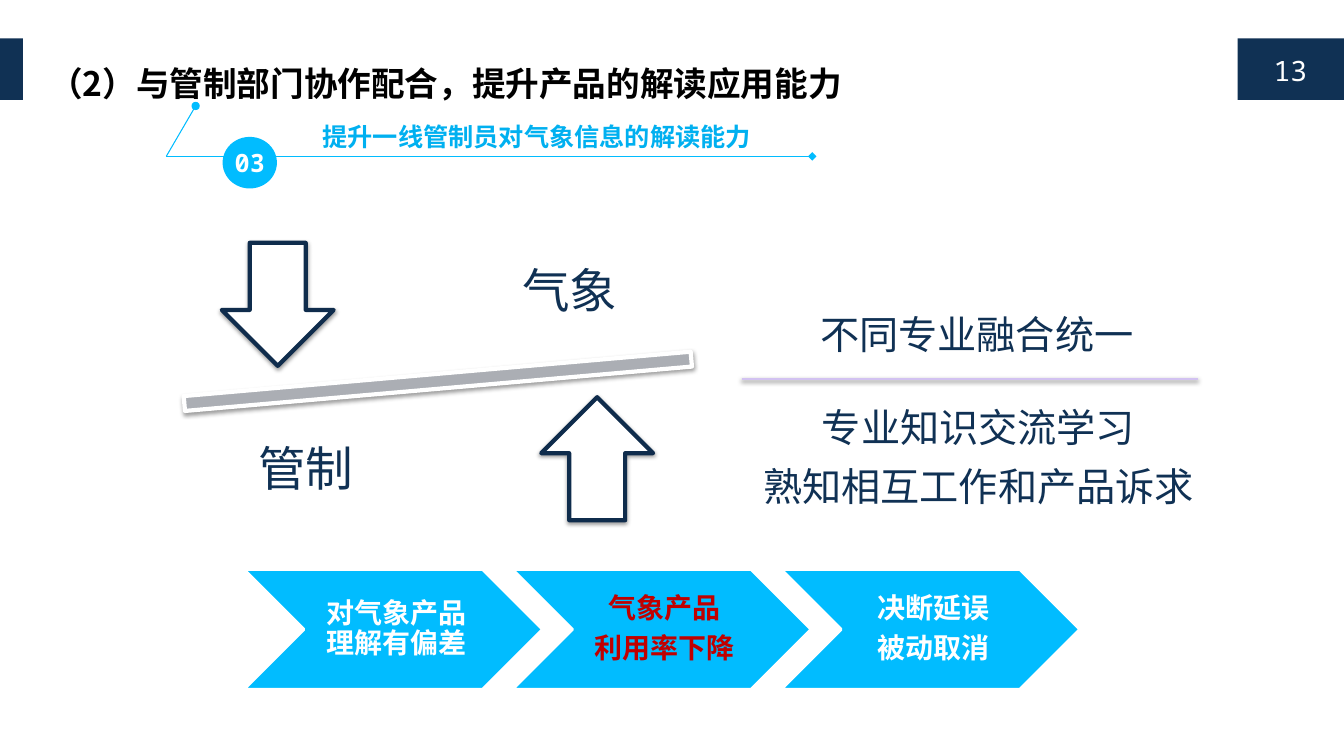
import pptx
import pptx.dml.color
import pptx.enum.shapes
import pptx.enum.text
import pptx.oxml
import pptx.oxml.ns
import pptx.util
from lxml import etree

Cm = pptx.util.Cm
Pt = pptx.util.Pt
SHAPE = pptx.enum.shapes.MSO_SHAPE
ALIGN = pptx.enum.text.PP_ALIGN
ANCHOR = pptx.enum.text.MSO_ANCHOR
qn = pptx.oxml.ns.qn

COLORS = {
    "navy": "103154", "outline": "0F2C4C", "cyan": "01BCFF", "sky": "00B0F0",
    "red": "C00000", "white": "FFFFFF", "black": "000000", "gray": "ABAEB4",
    "lilac": "D2C2F1",
}
SANS = "Noto Sans CJK SC"
MONO = "Noto Sans Mono"


def color(name):
    return pptx.dml.color.RGBColor.from_string(COLORS[name])


def add_shadow(effects):
    """Soft shadow straight below the element."""
    outer = etree.SubElement(effects, qn("a:outerShdw"), blurRad=str(Pt(3.1)),
                             dist=str(Pt(1.6)), dir="5400000", rotWithShape="0")
    tint = etree.SubElement(outer, qn("a:srgbClr"), val=COLORS["black"])
    etree.SubElement(tint, qn("a:alpha"), val="38000")


def add_shape(page, kind, left, top, width, height, fill,
              line=None, weight=3, shadow=False, rotation=0):
    shape = page.shapes.add_shape(kind, Cm(left), Cm(top), Cm(width), Cm(height))
    shape.rotation = rotation
    shape.fill.solid()
    shape.fill.fore_color.rgb = color(fill)
    if line:
        shape.line.color.rgb = color(line)
        shape.line.width = Pt(weight)
    else:
        shape.line.fill.background()
    shape.shadow.inherit = False
    if shadow:
        add_shadow(shape._element.spPr.find(qn("a:effectLst")))
    return shape


def add_line(page, start, end, stroke, weight, head=None, tail=None, shadow=False):
    line = page.shapes.add_connector(pptx.enum.shapes.MSO_CONNECTOR.STRAIGHT,
                                     *(Cm(value) for value in start + end))
    line.line.color.rgb = color(stroke)
    line.line.width = Pt(weight)
    for tag, kind in (("a:headEnd", head), ("a:tailEnd", tail)):
        if kind:
            etree.SubElement(line.line._get_or_add_ln(), qn(tag), type=kind)
    effects = etree.SubElement(line._element.spPr, qn("a:effectLst"))
    if shadow:
        add_shadow(effects)


def write(shape, text, size, fill, font=SANS, bold=False, align=ALIGN.LEFT,
          anchor=ANCHOR.TOP, insets=(0.25, 0.13, 0.25, 0.13), wrap=True,
          spacing=None, after=0):
    """Put text into a shape, one paragraph per line of text."""
    frame = shape.text_frame
    frame.word_wrap = wrap
    frame.vertical_anchor = anchor
    (frame.margin_left, frame.margin_top,
     frame.margin_right, frame.margin_bottom) = map(Cm, insets)
    for index, words in enumerate(text.split("\n")):
        para = frame.add_paragraph() if index else frame.paragraphs[0]
        para.alignment = align
        para.space_after = Pt(after)
        if spacing:
            para.line_spacing = spacing
        span = para.add_run()
        span.text = words
        span.font.size = Pt(size)
        span.font.bold = bold
        span.font.name = font
        span.font.color.rgb = color(fill)
        etree.SubElement(span._r.rPr, qn("a:ea"), typeface=font)


def add_text(page, left, top, width, height, text, size, fill, **layout):
    box = page.shapes.add_textbox(Cm(left), Cm(top), Cm(width), Cm(height))
    write(box, text, size, fill, **layout)


def add_header(page):
    for left, width in ((0, 0.58), (31.19, 2.69)):
        add_shape(page, SHAPE.RECTANGLE, left, 0.97, width, 1.55, "navy")
    add_text(page, 31.62, 1.22, 1.8, 1.12, "13", 20, "white",
             font=MONO, align=ALIGN.CENTER)
    add_text(page, 0.99, 1.45, 24.26, 1.4,
             "（2）与管制部门协作配合，提升产品的解读应用能力", 24, "black", bold=True)


def add_subtitle(page):
    corner = (4.19, 3.94)
    add_line(page, (20.47, 3.94), corner, "cyan", 0.75, head="diamond")
    add_line(page, corner, (4.93, 2.67), "cyan", 0.75, tail="oval")
    badge = add_shape(page, SHAPE.OVAL, 5.61, 3.45, 1.37, 1.3, "cyan")
    write(badge, "03", 18, "white", font=MONO, bold=True, align=ALIGN.CENTER,
          anchor=ANCHOR.MIDDLE, insets=(0.05, 0.03, 0.05, 0.03))
    add_text(page, 8.13, 2.92, 15.24, 1.02, "提升一线管制员对气象信息的解读能力",
             18, "sky", bold=True, insets=(0, 0.13, 0.25, 0.13))


def add_balance(page):
    add_shape(page, SHAPE.MATH_MINUS, 2.31, 8.81, 17.45, 1.6, "gray",
              line="white", shadow=True, rotation=355)
    for kind, left, top in ((SHAPE.DOWN_ARROW, 5.59, 6.12),
                            (SHAPE.UP_ARROW, 13.64, 10.01)):
        add_shape(page, kind, left, top, 2.82, 3.1, "white",
                  line="outline", shadow=True)
    for label, left, top in (("气象", 11.56, 5.74), ("管制", 4.9, 10.24)):
        add_text(page, left, top, 5.61, 3.28, label, 34, "navy", font="Arial",
                 align=ALIGN.CENTER, anchor=ANCHOR.MIDDLE, insets=(0.66,) * 4,
                 spacing=0.9)


def add_goals(page):
    add_text(page, 20.42, 7.7, 8.48, 1.45, "不同专业融合统一", 28, "navy", wrap=False)
    add_text(page, 18.92, 9.73, 11.48, 3.25,
             "专业知识交流学习\n熟知相互工作和产品诉求", 28, "navy",
             wrap=False, align=ALIGN.CENTER, spacing=1.25)
    add_line(page, (18.69, 9.55), (30.18, 9.55), "lilac", 2, shadow=True)


def add_chain(page):
    steps = (("对气象产品理解有偏差", "white"),
             ("气象产品\n利用率下降", "red"),
             ("决断延误\n被动取消", "white"))
    for index, (text, fill) in enumerate(steps):
        left = 6.15 + index * 6.77
        add_shape(page, SHAPE.CHEVRON, left, 14.35, 7.52, 3.02, "cyan",
                  line="white", weight=2)
        add_text(page, left + 1.5, 14.35, 4.52, 3.02, text, 20, fill, bold=True,
                 align=ALIGN.CENTER, anchor=ANCHOR.MIDDLE,
                 insets=(0.23, 0.08, 0.08, 0.08), spacing=0.9, after=7)


def main():
    deck = pptx.Presentation()
    deck.slide_width = Cm(33.87)
    deck.slide_height = Cm(19.05)
    page = deck.slides.add_slide(deck.slide_layouts[6])
    # Title bar and numbered subtitle
    add_header(page)
    add_subtitle(page)
    # Seesaw on the left, goals on the right
    add_balance(page)
    add_goals(page)
    # Consequences along the bottom
    add_chain(page)
    deck.save("out.pptx")


if __name__ == "__main__":
    main()
